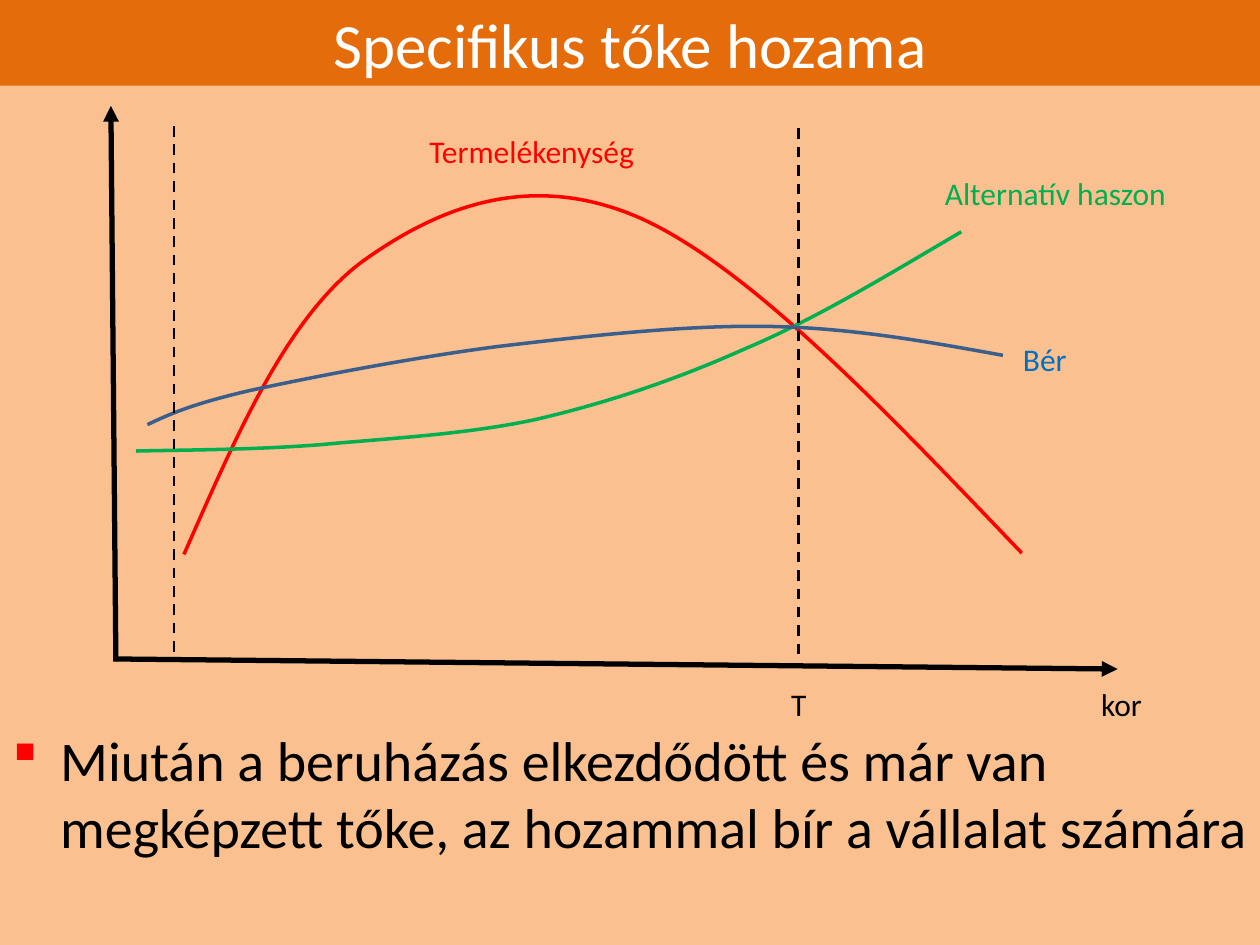
from lxml import etree
from pptx import Presentation
from pptx import util as u
from pptx.dml.color import RGBColor
from pptx.enum import dml, shapes, text
from pptx.oxml.ns import qn

WIDTH, HEIGHT = 10, 7.5
FONT = "Calibri"
COLORS = {
    "background": "FAC090", "banner": "E46C0A", "title": "FFFFFF",
    "ink": "000000", "productivity": "FF0000", "alternative": "00B050",
    "wage": "3A5F8C", "wage_label": "0070C0", "bullet": "FF0000",
}

# Each curve: colour, box (left, top, width, height), Bézier points
CURVES = [
    ("productivity", (1.46, 1.55, 6.65, 2.85),
     [(1.46, 4.4), (1.87, 3.47), (2.27, 2.53), (2.87, 2.08), (3.48, 1.64),
      (4.21, 1.35), (5.08, 1.73), (5.95, 2.12), (7.03, 3.26), (8.11, 4.39)]),
    ("alternative", (1.08, 1.84, 6.56, 1.73),
     [(1.08, 3.58), (1.54, 3.57), (2.01, 3.57), (2.54, 3.53), (3.07, 3.48),
      (3.69, 3.45), (4.25, 3.33), (4.81, 3.2), (5.35, 3.02), (5.91, 2.77),
      (6.48, 2.53), (7.05, 2.18), (7.63, 1.84)]),
    ("wage", (1.17, 2.59, 6.78, 0.78),
     [(1.17, 3.37), (1.34, 3.29), (1.51, 3.21), (1.98, 3.1), (2.44, 3),
      (3.26, 2.84), (3.95, 2.75), (4.63, 2.67), (5.41, 2.58), (6.08, 2.59),
      (6.75, 2.6), (7.35, 2.71), (7.96, 2.82)]),
]

# Each label: wording, colour, left, top, width
LABELS = [
    ("Alternatív haszon", "alternative", 7.4, 1.33, 2.18),
    ("Termelékenység", "productivity", 3.31, 1, 2.18),
    ("Bér", "wage_label", 8.02, 2.65, 2.18),
    ("T", "ink", 6.18, 5.39, 1.42),
    ("kor", "ink", 8.64, 5.39, 1.42),
]


def rgb(name):
    return RGBColor.from_string(COLORS[name])


def style_line(line, color, width):
    line.color.rgb = rgb(color)
    line.width = u.Pt(width)


def write(frame, wording, size, color):
    frame.word_wrap = True
    paragraph = frame.paragraphs[0]
    run = paragraph.add_run()
    run.text = wording
    for key, value in {"name": FONT, "size": u.Pt(size)}.items():
        setattr(run.font, key, value)
    run.font.color.rgb = rgb(color)
    return paragraph


def add_title(slide, wording):
    banner = slide.shapes.title
    place = {"left": 0, "top": 0, "width": WIDTH, "height": 0.68}
    for key, value in place.items():
        setattr(banner, key, u.Inches(value))
    banner.fill.solid()
    banner.fill.fore_color.rgb = rgb("banner")
    frame = banner.text_frame
    frame.auto_size = text.MSO_AUTO_SIZE.NONE
    frame.vertical_anchor = text.MSO_ANCHOR.MIDDLE
    write(frame, wording, 36, "title").alignment = text.PP_ALIGN.CENTER


def add_line(slide, start, end, width, arrow=False, dashed=False):
    ends = [u.Inches(n) for n in (*start, *end)]
    connector = slide.shapes.add_connector(shapes.MSO_CONNECTOR.STRAIGHT, *ends)
    style_line(connector.line, "ink", width)
    if dashed:
        connector.line.dash_style = dml.MSO_LINE.DASH
    properties = connector._element.spPr
    if arrow:
        line = properties.find(qn("a:ln"))
        etree.SubElement(line, qn("a:tailEnd"), type="triangle")
    etree.SubElement(properties, qn("a:effectLst"))


def add_curve(slide, color, box, points):
    left, top, width, height = (u.Inches(n) for n in box)
    builder = slide.shapes.build_freeform(left, top)
    builder.add_line_segments([(left + width, top + height)], close=False)
    curve = builder.convert_to_shape()
    curve.shadow.inherit = False
    curve.fill.background()
    style_line(curve.line, color, 2)

    # Replace the box's diagonal with cubic segments
    path = curve._element.spPr.find(".//" + qn("a:path"))
    for step in list(path):
        path.remove(step)
    segments = [("a:moveTo", points[:1])]
    segments += [("a:cubicBezTo", points[i:i + 3])
                 for i in range(1, len(points), 3)]
    for tag, group in segments:
        step = etree.SubElement(path, qn(tag))
        for x, y in group:
            etree.SubElement(step, qn("a:pt"), x=str(u.Inches(x) - left),
                             y=str(u.Inches(y) - top))


def add_text(slide, wording, size, color, box):
    holder = slide.shapes.add_textbox(*(u.Inches(n) for n in box))
    return write(holder.text_frame, wording, size, color)


def add_bullet(paragraph, indent):
    paragraph.space_before = u.Pt(6.4)
    properties = paragraph._p.get_or_add_pPr()
    properties.set("marL", str(u.Inches(indent)))
    properties.set("indent", str(-u.Inches(indent)))
    color = etree.SubElement(properties, qn("a:buClr"))
    etree.SubElement(color, qn("a:srgbClr"), val=COLORS["bullet"])
    etree.SubElement(properties, qn("a:buFont"), typeface="Wingdings")
    etree.SubElement(properties, qn("a:buChar"), char="§")


def main():
    deck = Presentation()
    deck.slide_width, deck.slide_height = u.Inches(WIDTH), u.Inches(HEIGHT)
    slide = deck.slides.add_slide(deck.slide_layouts.get_by_name("Title Only"))
    slide.background.fill.solid()
    slide.background.fill.fore_color.rgb = rgb("background")
    add_title(slide, "Specifikus tőke hozama")

    # Axes
    add_line(slide, (0.92, 5.23), (8.87, 5.31), 3, arrow=True)
    add_line(slide, (0.92, 5.25), (0.88, 0.84), 3, arrow=True)

    # Curves and labels
    for color, box, points in CURVES:
        add_curve(slide, color, box, points)
    for wording, color, left, top, width in LABELS:
        add_text(slide, wording, 18, color, (left, top, width, 0.4))

    # Start of the investment and the crossing point T
    for x, top in ((1.38, 1), (6.34, 1.02)):
        add_line(slide, (x, top), (x, top + 4.23), 1.5, dashed=True)

    # Conclusion
    conclusion = add_text(
        slide,
        "Miután a beruházás elkezdődött és már van megképzett tőke, "
        "az hozammal bír a vállalat számára",
        32, "ink", (0, 5.71, WIDTH, 1.78))
    add_bullet(conclusion, 0.38)

    deck.save("out.pptx")


if __name__ == "__main__":
    main()
